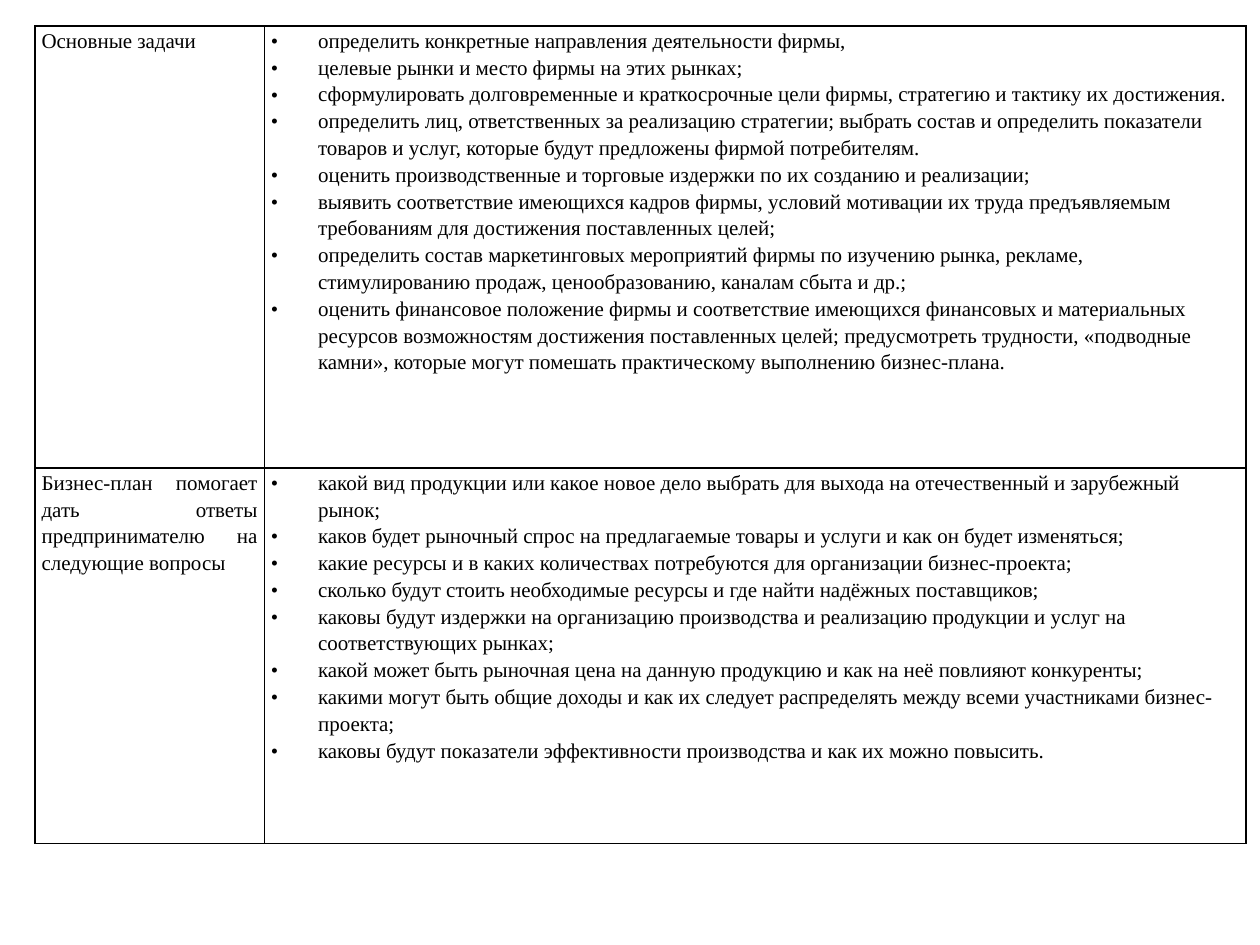
import pptx
import pptx.util
import pptx.dml.color
import pptx.enum.text
import pptx.oxml.ns
import lxml.etree

Pt = pptx.util.Pt
ALIGN = pptx.enum.text.PP_ALIGN
qn = pptx.oxml.ns.qn
COLORS = {"ink": "000000"}
FONT = "Times New Roman"
INDENT = Pt(27)

ROWS = [
    ("Основные задачи", [
        "определить конкретные направления деятельности фирмы,",
        "целевые рынки и место фирмы на этих рынках;",
        "сформулировать долговременные и краткосрочные цели фирмы, стратегию и тактику их достижения.",
        "определить лиц, ответственных за реализацию стратегии; выбрать состав и определить показатели товаров и услуг, которые будут предложены фирмой потребителям.",
        "оценить производственные и торговые издержки по их созданию и реализации;",
        "выявить соответствие имеющихся кадров фирмы, условий мотивации их труда предъявляемым требованиям для достижения поставленных целей;",
        "определить состав маркетинговых мероприятий фирмы по изучению рынка, рекламе, стимулированию продаж, ценообразованию, каналам сбыта и др.;",
        "оценить финансовое положение фирмы и соответствие имеющихся финансовых и материальных ресурсов возможностям достижения поставленных целей; предусмотреть трудности, «подводные камни», которые могут помешать практическому выполнению бизнес-плана.",
    ]),
    ("Бизнес-план помогает дать ответы предпринимателю на следующие вопросы", [
        "какой вид продукции или какое новое дело выбрать для выхода на отечественный и зарубежный рынок;",
        "каков будет рыночный спрос на предлагаемые товары и услуги и как он будет изменяться;",
        "какие ресурсы и в каких количествах потребуются для организации бизнес-проекта;",
        "сколько будут стоить необходимые ресурсы и где найти надёжных поставщиков;",
        "каковы будут издержки на организацию производства и реализацию продукции и услуг на соответствующих рынках;",
        "какой может быть рыночная цена на данную продукцию и как на неё повлияют конкуренты;",
        "какими могут быть общие доходы и как их следует распределять между всеми участниками бизнес-проекта;",
        "каковы будут показатели эффективности производства и как их можно повысить.",
    ]),
]


def style_cell(cell):
    cell.margin_left = cell.margin_right = Pt(3.75)
    cell.margin_top = cell.margin_bottom = 0
    tcPr = cell._tc.get_or_add_tcPr()
    for side in ("lnL", "lnR", "lnT", "lnB"):
        ln = lxml.etree.SubElement(tcPr, qn("a:" + side), w=str(Pt(1)))
        fill = lxml.etree.SubElement(ln, qn("a:solidFill"))
        lxml.etree.SubElement(fill, qn("a:srgbClr"), val=COLORS["ink"])
    cell.fill.background()
    for p in cell.text_frame.paragraphs:
        p.line_spacing = 1.15
        for r in p.runs:
            r.font.name = FONT
            r.font.size = Pt(12)
            r.font.bold = False
            r.font.color.rgb = pptx.dml.color.RGBColor.from_string(COLORS["ink"])


def add_bullet(p):
    pPr = p._p.get_or_add_pPr()
    pPr.set("marL", str(INDENT))
    pPr.set("indent", str(-INDENT))
    lxml.etree.SubElement(pPr, qn("a:buFont"), typeface=FONT)
    lxml.etree.SubElement(pPr, qn("a:buChar"), char="•")
    tabs = lxml.etree.SubElement(pPr, qn("a:tabLst"))
    lxml.etree.SubElement(tabs, qn("a:tab"), pos=str(Pt(36)), algn="l")


prs = pptx.Presentation()
prs.slide_width, prs.slide_height = Pt(720), Pt(540)
s = prs.slides.add_slide(prs.slide_layouts[6])

table = s.shapes.add_table(2, 2, Pt(20), Pt(15), Pt(692), Pt(467)).table
table.first_row = False
table.horz_banding = False
for col, width in zip(table.columns, (131, 561)):
    col.width = Pt(width)
for row, height in zip(table.rows, (252.5, 214.5)):
    row.height = Pt(height)

for row, (topic, points) in zip(table.rows, ROWS):
    label, details = row.cells
    label.text_frame.text = topic
    details.text_frame.text = "\n".join(points)
    style_cell(label)
    style_cell(details)
    label.text_frame.paragraphs[0].alignment = ALIGN.JUSTIFY
    for p in details.text_frame.paragraphs:
        p.alignment = ALIGN.LEFT
        add_bullet(p)

prs.save("out.pptx")
